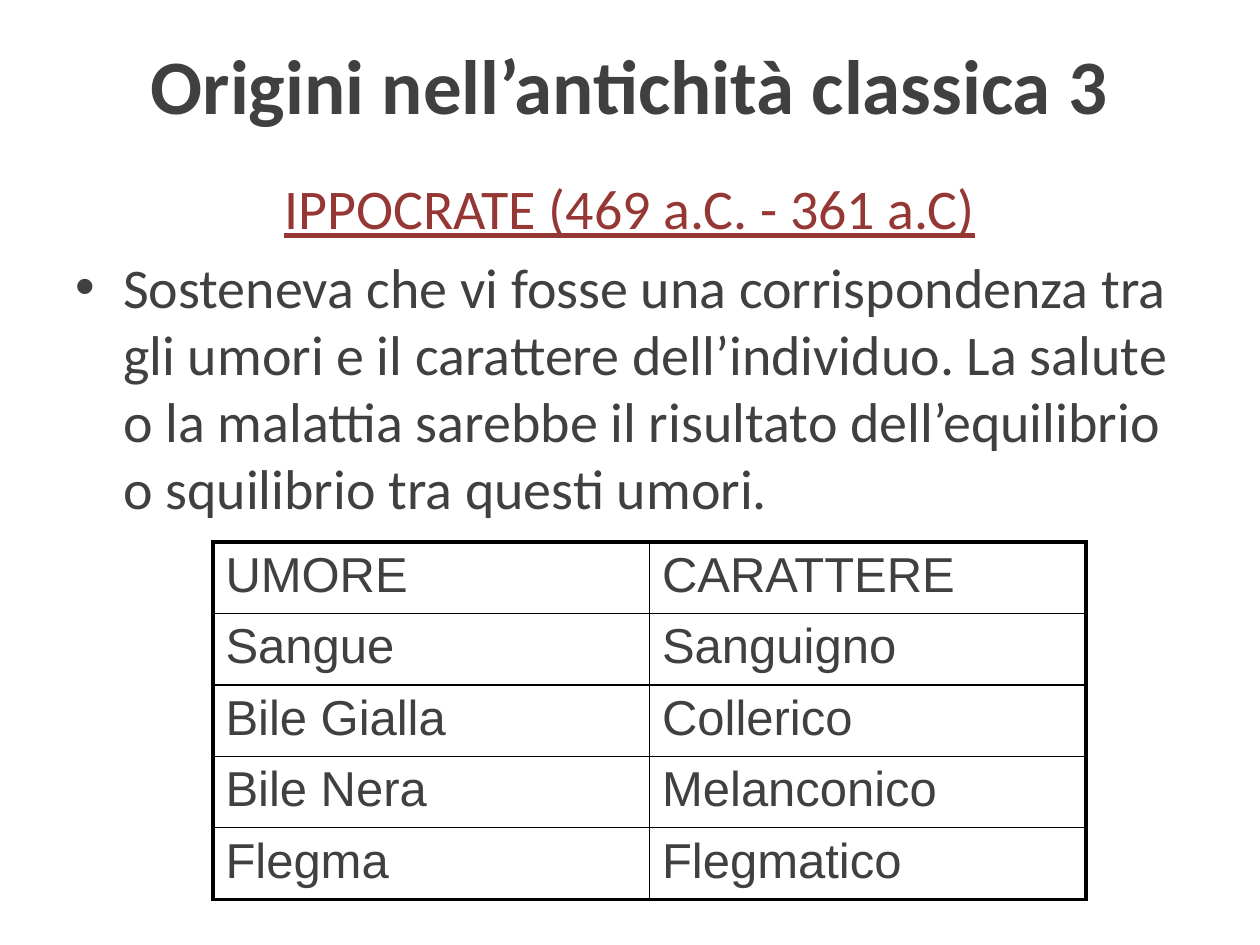
from lxml import etree
from pptx import Presentation
from pptx import util as u
from pptx.dml.color import RGBColor
from pptx.enum import text
from pptx.oxml import ns

COLORS = {"text": "404040", "heading": "953735", "border": "000000"}
TITLE = "Origini nell’antichità classica 3"
HEADING = "IPPOCRATE (469 a.C. - 361 a.C)"
BODY = (
    "Sosteneva che vi fosse una corrispondenza tra gli umori e il carattere "
    "dell’individuo. La salute o la malattia sarebbe il risultato "
    "dell’equilibrio o squilibrio tra questi umori."
)
HUMOURS = [
    ("UMORE", "CARATTERE"),
    ("Sangue", "Sanguigno"),
    ("Bile Gialla", "Collerico"),
    ("Bile Nera", "Melanconico"),
    ("Flegma", "Flegmatico"),
]
TABLE_BOX = (1.69, 4.3, 6.93, 2.83)
OUTER_WIDTH, INNER_WIDTH = 2.25, 1


def style(paragraph, font_name, size, color, bold=False, underline=False):
    font = paragraph.font if not paragraph.runs else paragraph.runs[0].font
    font.name = font_name
    font.size = u.Pt(size)
    font.bold = bold
    font.underline = underline
    font.color.rgb = RGBColor.from_string(COLORS[color])


def add_text(slide, box, lines, anchor):
    shape = slide.shapes.add_textbox(*map(u.Inches, box))
    frame = shape.text_frame
    frame.word_wrap = True
    frame.vertical_anchor = anchor
    frame.text = "\n".join(lines)
    return frame.paragraphs


def add_bullet(paragraph, indent):
    properties = paragraph._p.get_or_add_pPr()
    properties.set("marL", str(u.Inches(indent)))
    properties.set("indent", str(-u.Inches(indent)))
    etree.SubElement(properties, ns.qn("a:buFont"), typeface="Arial")
    etree.SubElement(properties, ns.qn("a:buChar"), char="•")


def add_border(cell, side, width):
    line = etree.SubElement(
        cell._tc.get_or_add_tcPr(), ns.qn(f"a:ln{side}"), w=str(u.Pt(width))
    )
    fill = etree.SubElement(line, ns.qn("a:solidFill"))
    etree.SubElement(fill, ns.qn("a:srgbClr"), val=COLORS["border"])


def add_humours_table(slide):
    row_count, column_count = len(HUMOURS), len(HUMOURS[0])
    table = slide.shapes.add_table(
        row_count, column_count, *map(u.Inches, TABLE_BOX)
    ).table
    table.first_row = table.horz_banding = False
    for row, values in enumerate(HUMOURS):
        for column, value in enumerate(values):
            cell = table.cell(row, column)
            cell.text = value
            style(cell.text_frame.paragraphs[0], "Arial", 28, "text")
            outer_sides = {
                "L": column == 0,
                "R": column == column_count - 1,
                "T": row == 0,
                "B": row == row_count - 1,
            }
            for side, is_outer in outer_sides.items():
                add_border(cell, side, OUTER_WIDTH if is_outer else INNER_WIDTH)
            cell.fill.background()


def main():
    presentation = Presentation()
    presentation.slide_width = u.Inches(10)
    presentation.slide_height = u.Inches(7.5)
    slide = presentation.slides.add_slide(presentation.slide_layouts[6])

    (title,) = add_text(slide, (0.5, 0.25, 9, 0.83), [TITLE], text.MSO_ANCHOR.MIDDLE)
    title.alignment = text.PP_ALIGN.CENTER
    style(title, "Calibri", 44, "text", bold=True)

    heading, body = add_text(
        slide, (0.5, 1.33, 9, 3), [HEADING, BODY], text.MSO_ANCHOR.TOP
    )
    heading.alignment = text.PP_ALIGN.CENTER
    style(heading, "Calibri", 32, "heading", underline=True)
    body.space_before = u.Pt(6.4)
    add_bullet(body, 0.38)
    style(body, "Calibri", 32, "text")

    add_humours_table(slide)
    presentation.save("out.pptx")


if __name__ == "__main__":
    main()
